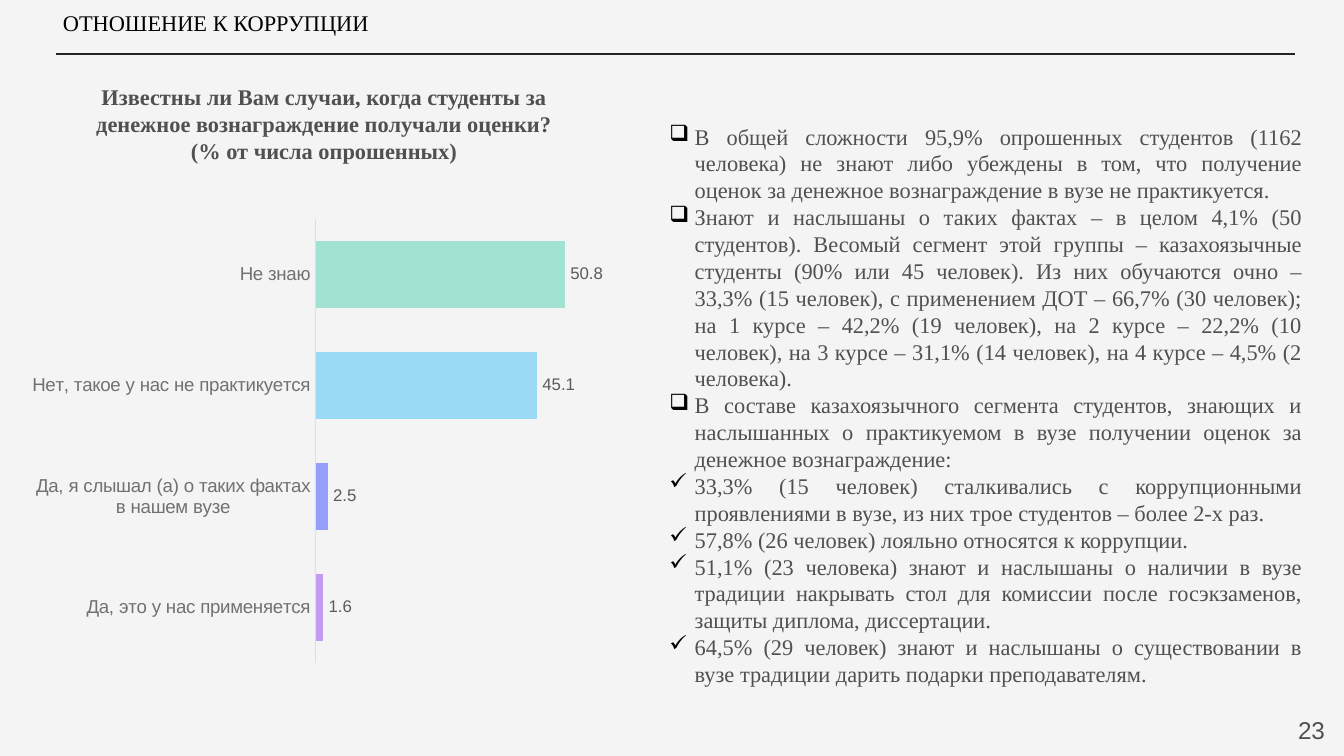
from lxml.etree import SubElement
from pptx import Presentation
from pptx.chart.data import CategoryChartData
from pptx.dml.color import RGBColor
from pptx.enum.chart import XL_CHART_TYPE, XL_LABEL_POSITION, XL_TICK_MARK
from pptx.enum.shapes import MSO_CONNECTOR
from pptx.enum.text import MSO_ANCHOR, PP_ALIGN
from pptx.oxml.ns import qn
from pptx.util import Cm, Pt

SERIF, SANS = "Times New Roman", "Arial"
GREY = "505050"
BOX, CHECK = "❑", "✓"

FINDINGS = [
    (BOX, "В общей сложности 95,9% опрошенных студентов (1162 человека) не знают либо "
          "убеждены в том, что получение оценок за денежное вознаграждение в вузе не "
          "практикуется."),
    (BOX, "Знают и наслышаны о таких фактах – в целом 4,1% (50 студентов). Весомый сегмент "
          "этой группы – казахоязычные студенты (90% или 45 человек). Из них обучаются очно – "
          "33,3% (15 человек), с применением ДОТ – 66,7% (30 человек); на 1 курсе – 42,2% "
          "(19 человек), на 2 курсе – 22,2% (10 человек), на 3 курсе – 31,1% (14 человек), "
          "на 4 курсе – 4,5% (2 человека)."),
    (BOX, "В составе казахоязычного сегмента студентов, знающих и наслышанных о практикуемом "
          "в вузе получении оценок за денежное вознаграждение:"),
    (CHECK, "33,3% (15 человек) сталкивались с коррупционными проявлениями в вузе, из них "
            "трое студентов – более 2-х раз."),
    (CHECK, "57,8% (26 человек) лояльно относятся к коррупции."),
    (CHECK, "51,1% (23 человека) знают и наслышаны о наличии в вузе традиции накрывать стол "
            "для комиссии после госэкзаменов, защиты диплома, диссертации."),
    (CHECK, "64,5% (29 человек) знают и наслышаны о существовании в вузе традиции дарить "
            "подарки преподавателям."),
]

# Answer, share in percent, bar colour; listed from the bottom bar up
ANSWERS = [
    ("Да, это у нас применяется", 1.6, "C29AF4"),
    ("Да, я слышал (а) о таких фактах в нашем вузе", 2.5, "959FFA"),
    ("Нет, такое у нас не практикуется", 45.1, "9ADAF4"),
    ("Не знаю", 50.8, "A1E2D3"),
]


def rgb(value):
    return RGBColor.from_string(value)


def set_font(font, name, size, color, bold=False):
    font.name, font.size, font.bold = name, Pt(size), bold
    font.color.rgb = rgb(color)


def add_text(s, x, y, w, h, lines, font=SERIF, size=12, color=GREY, bold=False,
             align=PP_ALIGN.LEFT, anchor=MSO_ANCHOR.TOP, top=0.25):
    """Add a text box with one paragraph per line; top is the upper inset in cm."""
    tf = s.shapes.add_textbox(Cm(x), Cm(y), Cm(w), Cm(h)).text_frame
    tf.word_wrap = True
    tf.vertical_anchor = anchor
    tf.margin_top = Cm(top)
    tf.text = "\n".join(lines)
    for p in tf.paragraphs:
        p.alignment = align
        set_font(p.runs[0].font, font, size, color, bold)
    return tf


def add_bullet(p, char, indent=0.48):
    pPr = p._p.get_or_add_pPr()
    pPr.set("marL", str(Cm(indent)))
    pPr.set("indent", str(-Cm(indent)))
    clr = SubElement(pPr, qn("a:buClr"))
    SubElement(clr, qn("a:srgbClr"), val="000000")
    SubElement(pPr, qn("a:buChar"), char=char)


def add_rule(s, x1, x2, y):
    line = s.shapes.add_connector(MSO_CONNECTOR.STRAIGHT, Cm(x1), Cm(y), Cm(x2), Cm(y))
    line.line.color.rgb = rgb("242424")
    line.line.width = Pt(0.75)
    SubElement(line._element.spPr, qn("a:effectLst"))


def set_plot_layout(chart, x, y, w, h):
    """Place the inner plot area, in fractions of the chart."""
    area = chart._chartSpace.chart.plotArea
    for old in area.findall(qn("c:layout")):
        area.remove(old)
    layout = SubElement(area, qn("c:layout"))
    area.insert(0, layout)
    manual = SubElement(layout, qn("c:manualLayout"))
    settings = [("layoutTarget", "inner"), ("xMode", "edge"), ("yMode", "edge"),
                ("x", x), ("y", y), ("w", w), ("h", h)]
    for tag, val in settings:
        SubElement(manual, qn(f"c:{tag}"), val=str(val))


def add_bar_chart(s, x, y, w, h, answers):
    names, shares, colors = zip(*answers)
    data = CategoryChartData()
    data.categories = names
    data.add_series("Series 1", shares)
    chart = s.shapes.add_chart(XL_CHART_TYPE.BAR_CLUSTERED, Cm(x), Cm(y), Cm(w), Cm(h),
                               data).chart
    chart.has_legend = chart.has_title = False
    set_font(chart.font, SANS, 10, "242424")
    set_plot_layout(chart, 0.47, 0.09, 0.49, 0.9)

    axis = chart.category_axis
    axis.major_tick_mark = axis.minor_tick_mark = XL_TICK_MARK.NONE
    axis.format.line.color.rgb = rgb("DEDEDE")
    axis.format.line.width = Pt(0.75)
    set_font(axis.tick_labels.font, SANS, 10, "717171")
    values = chart.value_axis
    values.minimum_scale, values.maximum_scale = 0, 60
    values.has_major_gridlines = False
    values.visible = False

    plot = chart.plots[0]
    plot.gap_width = 66
    plot.vary_by_categories = False
    series = plot.series[0]
    for i, color in enumerate(colors):
        fill = series.points[i].format.fill
        fill.solid()
        fill.fore_color.rgb = rgb(color)
    labels = series.data_labels
    labels.show_value = True
    labels.position = XL_LABEL_POSITION.OUTSIDE_END
    set_font(labels.font, SANS, 9, "5B5B5B")


def main():
    prs = Presentation()
    prs.slide_width, prs.slide_height = Cm(25.4), Cm(14.29)
    s = prs.slides.add_slide(prs.slide_layouts[6])
    s.background.fill.solid()
    s.background.fill.fore_color.rgb = rgb("F4F4F4")

    add_rule(s, 1.05, 24.48, 1.02)
    add_text(s, 23.77, 13.18, 1.52, 1.09, ["23"], font=SANS, size=13,
             align=PP_ALIGN.RIGHT, anchor=MSO_ANCHOR.MIDDLE)
    tf = add_text(s, 12.4, 1.57, 12.47, 11.63, [text for _, text in FINDINGS],
                  align=PP_ALIGN.JUSTIFY, top=0.75)
    for p, (char, _) in zip(tf.paragraphs, FINDINGS):
        add_bullet(p, char)
    add_text(s, 0.79, 1.32, 10.67, 2.06,
             ["Известны ли Вам случаи, когда студенты за денежное вознаграждение "
              "получали оценки?", "(% от числа опрошенных)"],
             bold=True, align=PP_ALIGN.CENTER)
    add_text(s, 0.94, 0.05, 23.65, 0.76, ["ОТНОШЕНИЕ К КОРРУПЦИИ"], color="000000", top=0.13)
    add_bar_chart(s, 0.61, 3.3, 11.38, 9.32, ANSWERS)
    prs.save("out.pptx")


if __name__ == "__main__":
    main()
